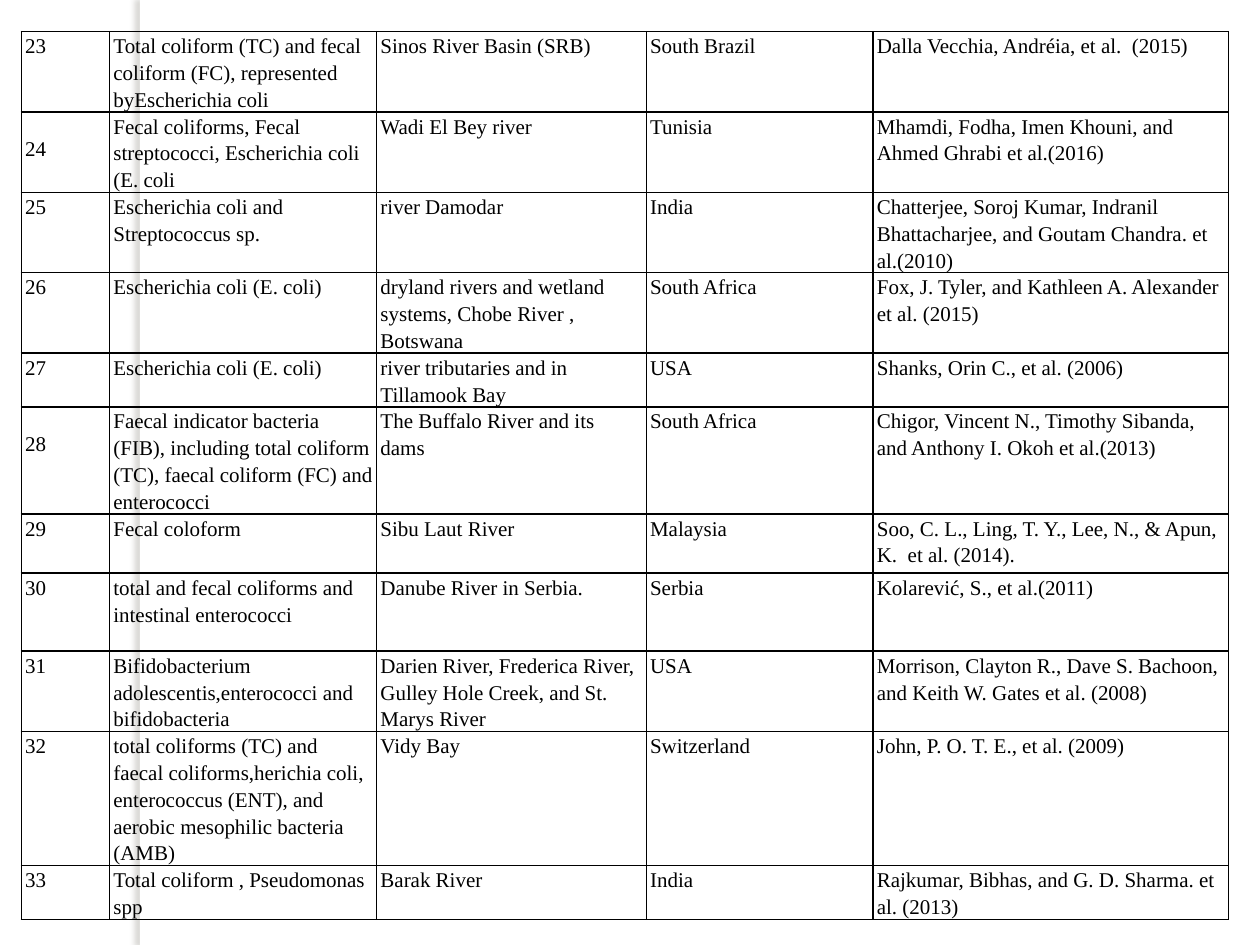
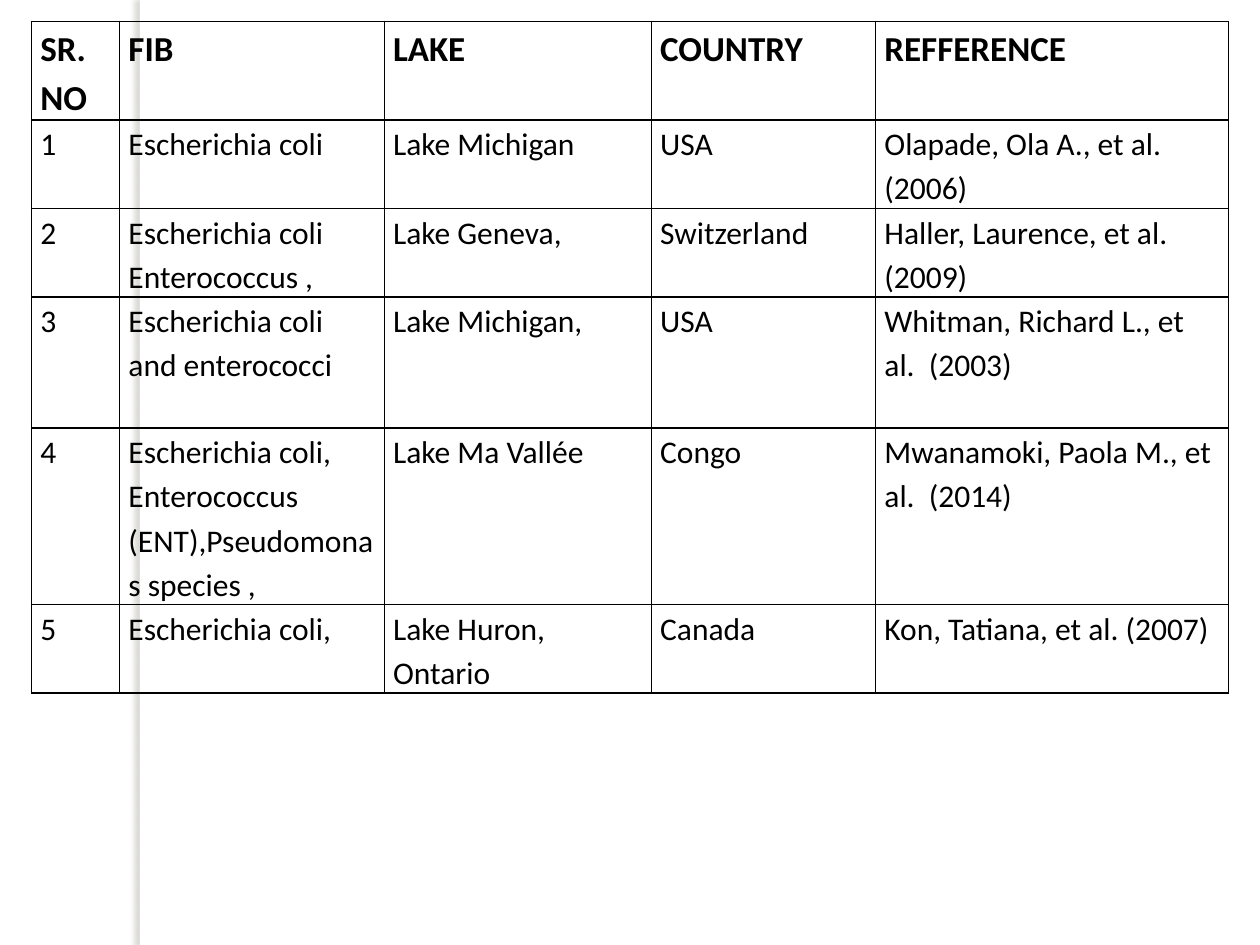
"""Build two slides of faecal indicator bacteria tables for rivers and lakes."""
from dataclasses import dataclass

from lxml.etree import SubElement
from pptx import Presentation
from pptx.dml.color import RGBColor
from pptx.enum.shapes import MSO_SHAPE
from pptx.oxml.ns import qn
from pptx.util import Inches, Pt


@dataclass(frozen=True)
class Theme:
    text: str = "000000"
    paper: str = "FFFFFF"
    shadow: str = "736F63"
    border: float = 1
    line_spacing: float = 1.15


THEME = Theme()

RIVERS = dict(
    left=0.17, top=0.25, margin=0.03, font="Times New Roman", size=12,
    cols=[0.7, 2.12, 2.14, 1.8, 2.82],
    heights=[0.63, 0.63, 0.63, 0.63, 0.42, 0.84, 0.47, 0.62, 0.63, 1.06, 0.42],
    lowered={"24": 0.18, "28": 0.18},
    header=None,
    rows=[
        ("23", "Total coliform (TC) and fecal coliform (FC), represented byEscherichia coli",
         "Sinos River Basin (SRB)", "South Brazil", "Dalla Vecchia, Andréia, et al.  (2015)"),
        ("24", "Fecal coliforms, Fecal streptococci, Escherichia coli (E. coli",
         "Wadi El Bey river", "Tunisia",
         "Mhamdi, Fodha, Imen Khouni, and Ahmed Ghrabi et al.(2016)"),
        ("25", "Escherichia coli and Streptococcus sp.", "river Damodar", "India",
         "Chatterjee, Soroj Kumar, Indranil Bhattacharjee, and Goutam Chandra. et al.(2010)"),
        ("26", "Escherichia coli (E. coli)",
         "dryland rivers and wetland systems, Chobe River , Botswana", "South Africa",
         "Fox, J. Tyler, and Kathleen A. Alexander et al. (2015)"),
        ("27", "Escherichia coli (E. coli)", "river tributaries and in Tillamook Bay", "USA",
         "Shanks, Orin C., et al. (2006)"),
        ("28", "Faecal indicator bacteria (FIB), including total coliform (TC), "
         "faecal coliform (FC) and enterococci", "The Buffalo River and its dams",
         "South Africa", "Chigor, Vincent N., Timothy Sibanda, and Anthony I. Okoh et al.(2013)"),
        ("29", "Fecal coloform", "Sibu Laut River", "Malaysia",
         "Soo, C. L., Ling, T. Y., Lee, N., & Apun, K.  et al. (2014)."),
        ("30", "total and fecal coliforms and intestinal enterococci",
         "Danube River in Serbia.", "Serbia", "Kolarević, S., et al.(2011)"),
        ("31", "Bifidobacterium adolescentis,enterococci and bifidobacteria",
         "Darien River, Frederica River, Gulley Hole Creek, and St. Marys River", "USA",
         "Morrison, Clayton R., Dave S. Bachoon, and Keith W. Gates et al. (2008)"),
        ("32", "total coliforms (TC) and faecal coliforms,herichia coli, "
         "enterococcus (ENT), and aerobic mesophilic bacteria (AMB)", "Vidy Bay",
         "Switzerland", "John, P. O. T. E., et al. (2009)"),
        ("33", "Total coliform , Pseudomonas spp", "Barak River", "India",
         "Rajkumar, Bibhas, and G. D. Sharma. et al. (2013)"),
    ],
)

LAKES = dict(
    left=0.25, top=0.17, margin=0.07, font="Calibri", size=18, header_size=20,
    cols=[0.7, 2.1, 2.12, 1.78, 2.8],
    heights=[0.78, 0.7, 0.7, 1.04, 1.4, 0.7],
    lowered={},
    header=("SR. NO", "FIB", "LAKE", "COUNTRY", "REFFERENCE"),
    rows=[
        ("1", "Escherichia coli", "Lake Michigan", "USA", "Olapade, Ola A., et al. (2006)"),
        ("2", "Escherichia coli Enterococcus ,", "Lake Geneva,", "Switzerland",
         "Haller, Laurence, et al. (2009)"),
        ("3", "Escherichia coli and enterococci", "Lake Michigan,", "USA",
         "Whitman, Richard L., et al.  (2003)"),
        ("4", "Escherichia coli, Enterococcus (ENT),Pseudomonas species ,",
         "Lake Ma Vallée", "Congo", "Mwanamoki, Paola M., et al.  (2014)"),
        ("5", "Escherichia coli,", "Lake Huron, Ontario", "Canada",
         "Kon, Tatiana, et al. (2007)"),
    ],
)


def add_color(parent, color):
    clr = SubElement(parent, qn("a:srgbClr"), val=color)
    return clr


def add_band(slide):
    sp = slide.shapes.add_shape(
        MSO_SHAPE.RECTANGLE, Inches(1.11), 0, Inches(0.08), Inches(7.5))
    sp.fill.solid()
    sp.fill.fore_color.rgb = RGBColor.from_string(THEME.paper)
    sp.line.fill.background()
    sp.shadow.inherit = False
    effects = sp._element.spPr.find(qn("a:effectLst"))
    shadow = SubElement(effects, qn("a:outerShdw"), blurRad=str(Pt(3)), dist=str(Pt(3)),
                        dir=str(180 * 60000), algn="ctr", rotWithShape="0")
    SubElement(add_color(shadow, THEME.shadow), qn("a:alpha"), val="25000")


def style_cell(cell, margin, top):
    cell.margin_left = cell.margin_right = Inches(margin)
    cell.margin_top, cell.margin_bottom = Inches(top), 0
    tc_pr = cell._tc.get_or_add_tcPr()
    for side in ("lnL", "lnR", "lnT", "lnB"):
        ln = SubElement(tc_pr, qn(f"a:{side}"), w=str(Pt(THEME.border)))
        add_color(SubElement(ln, qn("a:solidFill")), THEME.text)
    cell.fill.background()


def write_cell(cell, text, font, size, bold):
    p = cell.text_frame.paragraphs[0]
    p.text = text
    p.line_spacing = THEME.line_spacing
    p.font.name, p.font.size, p.font.bold = font, Pt(size), bold
    p.font.color.rgb = RGBColor.from_string(THEME.text)


def add_survey(slide, survey):
    header = survey["header"]
    rows = ([header] if header else []) + survey["rows"]
    cols, heights = survey["cols"], survey["heights"]
    table = slide.shapes.add_table(
        len(rows), len(cols), Inches(survey["left"]), Inches(survey["top"]),
        Inches(sum(cols)), Inches(sum(heights))).table
    table.first_row = table.horz_banding = False
    for col, width in zip(table.columns, cols):
        col.width = Inches(width)
    for row, height, texts in zip(table.rows, heights, rows):
        row.height = Inches(height)
        bold = texts is header
        size = survey["header_size"] if bold else survey["size"]
        for cell, text in zip(row.cells, texts):
            style_cell(cell, survey["margin"], survey["lowered"].get(text, 0))
            write_cell(cell, text, survey["font"], size, bold)


def main():
    prs = Presentation()
    prs.slide_width, prs.slide_height = Inches(10), Inches(7.5)
    for survey in (RIVERS, LAKES):
        slide = prs.slides.add_slide(prs.slide_layouts[6])
        add_band(slide)
        add_survey(slide, survey)
    prs.save("out.pptx")


if __name__ == "__main__":
    main()
